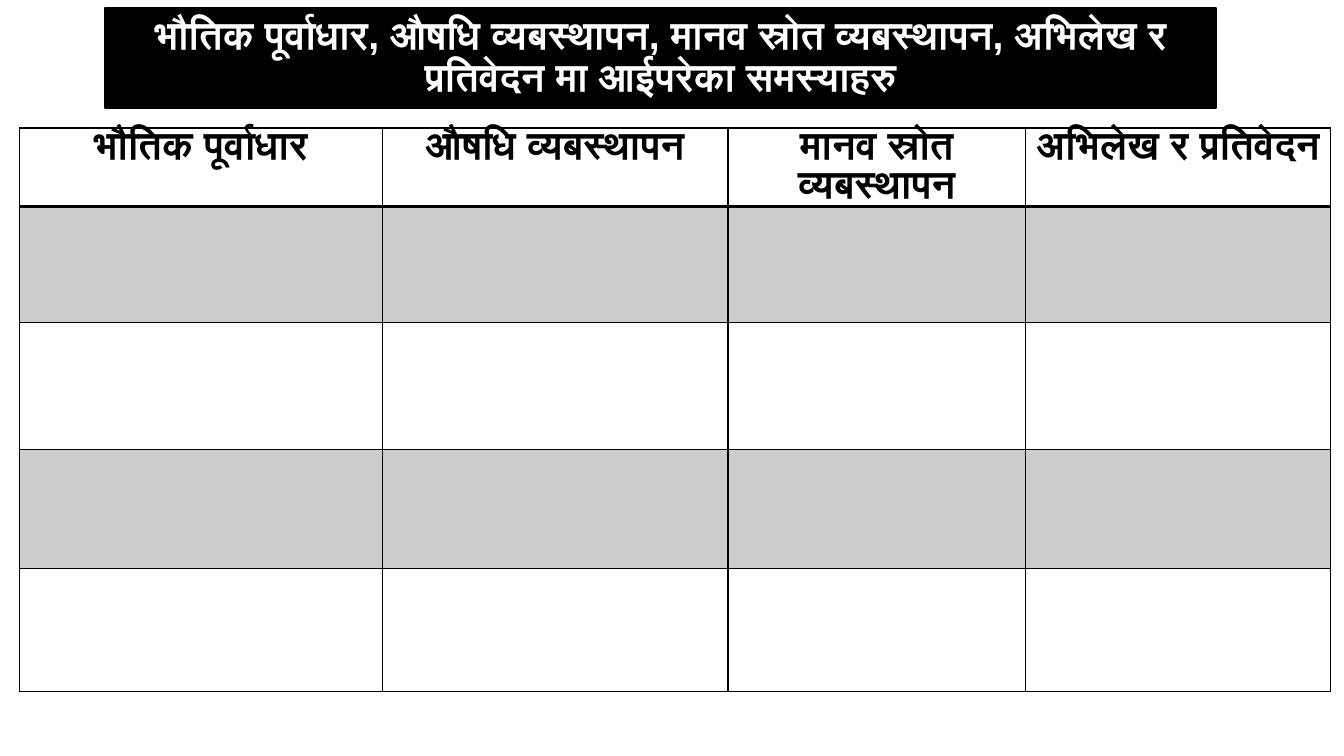
from pptx import Presentation, util as u
from pptx.dml.color import RGBColor
from pptx.enum import shapes, text
from pptx.oxml import parse_xml
from pptx.oxml.ns import nsdecls, qn
from lxml import etree


class Theme:
    font = "Arial"
    size = 28
    black = "000000"
    white = "FFFFFF"
    band_opacity = 20


HEADERS = ["भौतिक पूर्वाधार", "औषधि व्यबस्थापन",
           "मानव स्रोत व्यबस्थापन", "अभिलेख र प्रतिवेदन "]
COLUMN_WIDTHS = [3.6, 3.43, 2.95, 3.03]
ROW_HEIGHTS = [0.77, 1.15, 1.26, 1.18, 1.22]


def write(frame, content, color, line_spacing=None):
    """Put one centred, bold paragraph in a text frame."""
    frame.word_wrap = True
    paragraph = frame.paragraphs[0]
    paragraph.alignment = text.PP_ALIGN.CENTER
    if line_spacing:
        paragraph.line_spacing = line_spacing
    run = paragraph.add_run()
    run.text = content
    run.font.name = Theme.font
    run.font.size = u.Pt(Theme.size)
    run.font.bold = True
    run.font.color.rgb = RGBColor.from_string(color)


class SlideBuilder:
    def __init__(self, presentation, theme):
        self.theme = theme
        self.slide = presentation.slides.add_slide(presentation.slide_layouts[6])

    def banner(self, content, left, top, width, height):
        shape = self.slide.shapes.add_shape(
            shapes.MSO_SHAPE.RECTANGLE, *map(u.Inches, (left, top, width, height)))
        shape.shadow.inherit = False
        black = RGBColor.from_string(self.theme.black)
        shape.fill.solid()
        shape.fill.fore_color.rgb = black
        shape.line.color.rgb = black
        shape.line.width = u.Pt(1)
        shape.text_frame.vertical_anchor = text.MSO_ANCHOR.MIDDLE
        write(shape.text_frame, content, self.theme.white, line_spacing=0.9)

    def borders(self, cell, bottom):
        properties = cell._tc.get_or_add_tcPr()
        widths = {"lnL": 1, "lnR": 1, "lnT": 1, "lnB": bottom}
        for position, (side, width) in enumerate(widths.items()):
            properties.insert(position, parse_xml(
                f'<a:{side} {nsdecls("a")} w="{u.Pt(width)}"><a:solidFill>'
                f'<a:srgbClr val="{self.theme.black}"/></a:solidFill></a:{side}>'))

    def shade(self, cell):
        cell.fill.solid()
        cell.fill.fore_color.rgb = RGBColor.from_string(self.theme.black)
        color = cell._tc.tcPr.find(qn("a:solidFill")).find(qn("a:srgbClr"))
        alpha = etree.SubElement(color, qn("a:alpha"))
        alpha.set("val", str(self.theme.band_opacity * 1000))

    def table(self, headers, widths, heights, left, top):
        frame = self.slide.shapes.add_table(
            len(heights), len(widths), u.Inches(left), u.Inches(top),
            u.Inches(sum(widths)), u.Inches(sum(heights)))
        table = frame.table
        for column, width in zip(table.columns, widths):
            column.width = u.Inches(width)
        for index, (row, height) in enumerate(zip(table.rows, heights)):
            row.height = u.Inches(height)
            for cell, header in zip(row.cells, headers):
                cell.margin_left = cell.margin_right = u.Inches(0.06)
                cell.margin_top = cell.margin_bottom = 0
                # Odd rows carry the grey band
                if index % 2:
                    self.shade(cell)
                else:
                    cell.fill.background()
                self.borders(cell, bottom=1 if index else 2)
                if index == 0:
                    write(cell.text_frame, header, self.theme.black)


def main():
    presentation = Presentation()
    presentation.slide_width = u.Inches(13.33)
    presentation.slide_height = u.Inches(7.5)
    builder = SlideBuilder(presentation, Theme)

    # Title
    builder.banner("भौतिक पूर्वाधार, औषधि व्यबस्थापन, मानव स्रोत व्यबस्थापन, "
                   "अभिलेख र प्रतिवेदन मा आईपरेका समस्याहरु",
                   1.04, 0.08, 11.02, 0.99)

    # Empty grid of problems by topic
    builder.table(HEADERS, COLUMN_WIDTHS, ROW_HEIGHTS, 0.19, 1.27)

    presentation.save("out.pptx")


if __name__ == "__main__":
    main()
